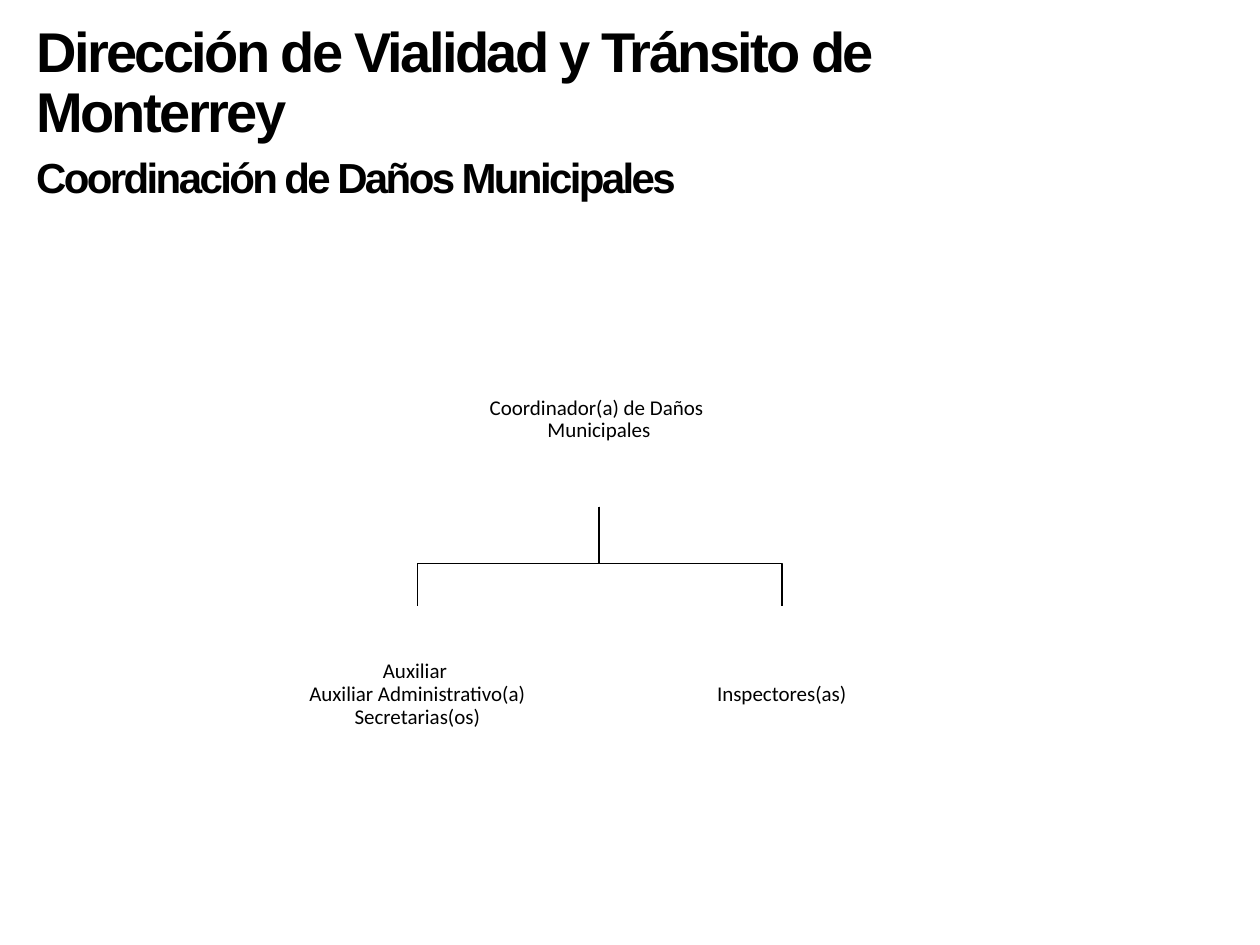
from pptx import Presentation, util as u
from pptx.dml.color import RGBColor
from pptx.enum import shapes, text

Pt = u.Pt
BLACK = RGBColor(0, 0, 0)
WHITE = RGBColor(255, 255, 255)

# Chart geometry
MID, TRUNK, BAR, ROW = 342.5, 289.5, 322, 346.5
BOX_W, BOX_H = 160.5, 101
STAFF = [
    (238.5, ["Auxiliar ", "Auxiliar Administrativo(a)", "Secretarias(os)"]),
    (446.75, ["Inspectores(as)"]),
]


def add_run(para, words, font, size, bold=False):
    run = para.add_run()
    run.text = words
    run.font.name = font
    run.font.size = Pt(size)
    run.font.bold = bold
    run.font.color.rgb = BLACK
    return run


def add_title(slide):
    title = slide.shapes.title
    title.left, title.top = Pt(13.5), Pt(11.5)
    title.width, title.height = Pt(537), Pt(106)
    frame = title.text_frame
    frame.word_wrap = True
    frame.auto_size = text.MSO_AUTO_SIZE.NONE
    frame.vertical_anchor = text.MSO_ANCHOR.MIDDLE
    lines = [("Dirección de Vialidad y Tránsito de Monterrey", 32, 0.9),
             ("Coordinación de Daños Municipales", 24, 1.0)]
    for i, (words, size, gap) in enumerate(lines):
        para = frame.add_paragraph() if i else frame.paragraphs[0]
        para.alignment = text.PP_ALIGN.LEFT
        para.line_spacing = gap
        para.space_before = Pt(4 if i else 0)
        run = add_run(para, words, "Arial", size, True)
        run.font._element.set("spc", "-150")


def add_link(slide, end):
    """Draw the elbow line from the head of the chart down to a box."""
    pen = slide.shapes.build_freeform(Pt(MID), Pt(TRUNK))
    pen.add_line_segments(
        [(Pt(x), Pt(y)) for x, y in [(MID, BAR), (end, BAR), (end, ROW)]],
        close=False)
    line = pen.convert_to_shape()
    line.shadow.inherit = False
    line.fill.background()
    line.line.color.rgb = BLACK
    line.line.width = Pt(1)


def add_role(slide, left, top, width, height, lines, fill=None):
    box = slide.shapes.add_shape(shapes.MSO_SHAPE.RECTANGLE, Pt(left),
                                 Pt(top), Pt(width), Pt(height))
    box.shadow.inherit = False
    box.line.fill.background()
    if fill is None:
        box.fill.background()
    else:
        box.fill.solid()
        box.fill.fore_color.rgb = fill
    frame = box.text_frame
    frame.word_wrap = True
    frame.vertical_anchor = text.MSO_ANCHOR.MIDDLE
    frame.margin_left = frame.margin_right = Pt(0.7)
    frame.margin_top = frame.margin_bottom = Pt(0.7)
    for i, words in enumerate(lines):
        para = frame.add_paragraph() if i else frame.paragraphs[0]
        para.alignment = text.PP_ALIGN.CENTER
        para.line_spacing = 0.9
        for j, part in enumerate(words.split("\n")):
            if j:
                para.add_line_break()
            add_run(para, part, "Calibri", 12)


def main():
    deck = Presentation()
    deck.slide_width, deck.slide_height = Pt(720), Pt(540)
    slide = deck.slides.add_slide(deck.slide_layouts[5])
    add_title(slide)

    # Lines behind the boxes
    for mid, _ in reversed(STAFF):
        add_link(slide, mid)

    # Head of the chart, then the staff below
    add_role(slide, 249, 190, 186.5, 99.5,
             ["Coordinador(a) de Daños \nMunicipales"])
    for mid, lines in STAFF:
        add_role(slide, mid - BOX_W / 2, ROW, BOX_W, BOX_H, lines, WHITE)
    deck.save("out.pptx")


if __name__ == "__main__":
    main()
